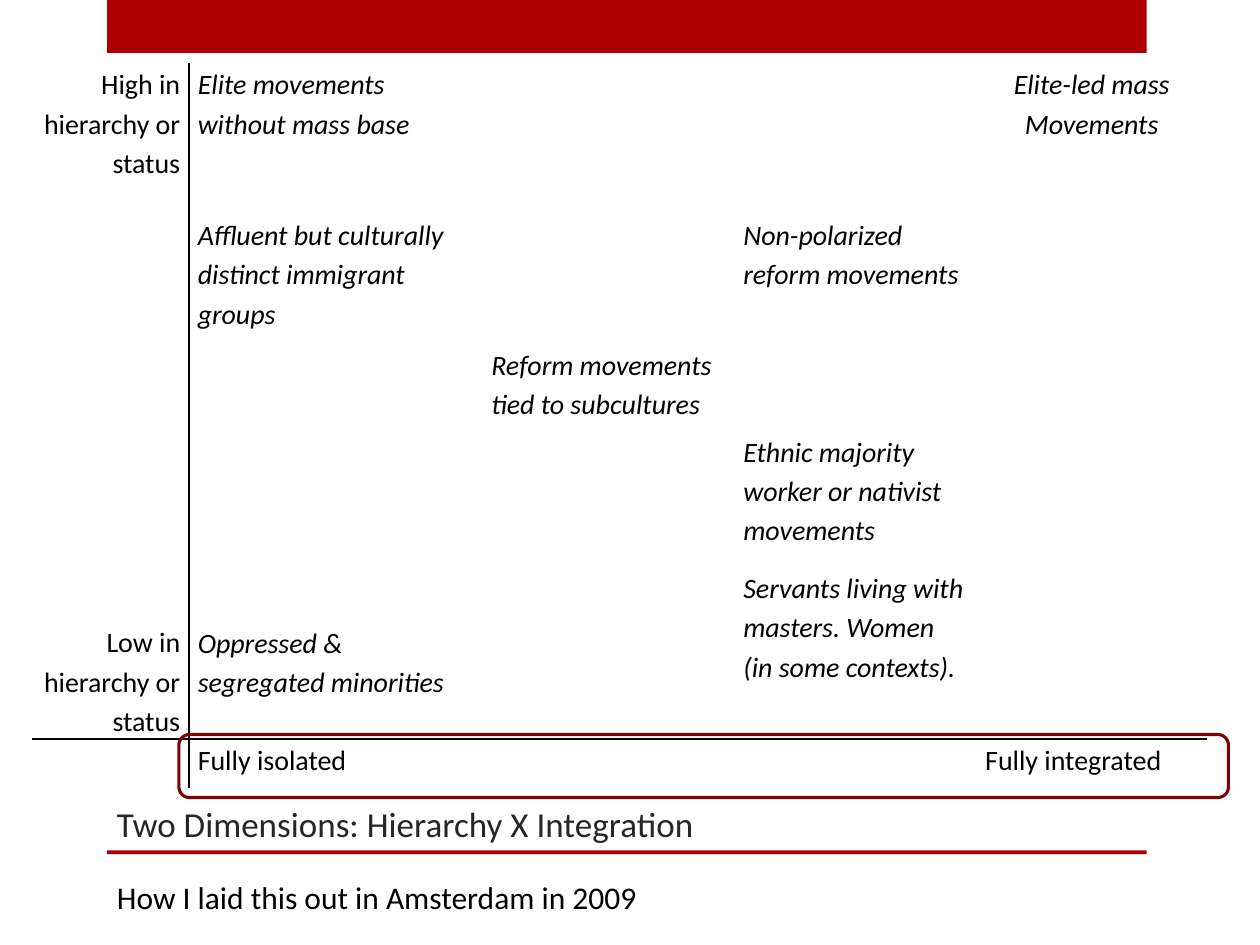
import dataclasses
import typing

import pptx
import pptx.dml.color
import pptx.enum.shapes
import pptx.enum.text
import pptx.oxml
import pptx.oxml.ns
import pptx.util

Inches = pptx.util.Inches
Pt = pptx.util.Pt
Align = pptx.enum.text.PP_ALIGN
Anchor = pptx.enum.text.MSO_ANCHOR
Kind = pptx.enum.shapes.MSO_SHAPE


@dataclasses.dataclass(frozen=True)
class Theme:
    font: str = "Calibri"
    red: str = "AD0101"
    frame: str = "800101"
    black: str = "000000"
    title: str = "262626"
    title_size: int = 20
    note_size: int = 18
    cell_size: int = 16
    empty_size: int = 12


class Box(typing.NamedTuple):
    left: float
    top: float
    width: float
    height: float

    def lengths(self) -> list:
        return [Inches(n) for n in self]


class Entry(typing.NamedTuple):
    row: int
    col: int
    text: str
    italic: bool = True
    align: Align = Align.LEFT
    anchor: Anchor = Anchor.TOP
    lift: float = 0


THEME = Theme()
COLS = [1.25, 2.33, 2, 1.92, 1.83]
ROWS = [0.69, 0.26, 1.03, 0.69, 1.08, 1.37, 0.39]
AXIS_ROW = len(ROWS) - 1
NO_STYLE = "{2D5ABB26-0587-4C30-8999-92F81FD0307C}"

ENTRIES = [
    Entry(0, 0, "High in hierarchy or status", False, Align.RIGHT),
    Entry(0, 1, "Elite movements without mass base"),
    Entry(0, 4, "Elite-led mass Movements", align=Align.CENTER),
    Entry(2, 1, "Affluent but culturally distinct immigrant groups"),
    Entry(2, 3, "Non-polarized reform movements"),
    Entry(3, 2, "Reform movements tied to subcultures"),
    Entry(4, 3, "Ethnic majority worker or nativist movements"),
    Entry(5, 0, "Low in hierarchy or status", False, Align.RIGHT, Anchor.BOTTOM),
    Entry(5, 1, "Oppressed & segregated minorities", anchor=Anchor.BOTTOM, lift=0.31),
    Entry(5, 3, "Servants living with masters. Women (in some contexts)."),
    Entry(6, 1, "Fully isolated", False),
    Entry(6, 4, "Fully integrated", False),
]


def color(code: str) -> pptx.dml.color.RGBColor:
    return pptx.dml.color.RGBColor.from_string(code)


def style(frame, size: int, code: str, italic: bool = False) -> None:
    for par in frame.paragraphs:
        for run in par.runs:
            run.font.name = THEME.font
            run.font.size = Pt(size)
            run.font.italic = italic
            run.font.color.rgb = color(code)


def add_bar(slide, box: Box) -> None:
    bar = slide.shapes.add_shape(Kind.RECTANGLE, *box.lengths())
    bar.shadow.inherit = False
    bar.fill.solid()
    bar.fill.fore_color.rgb = color(THEME.red)
    bar.line.fill.background()


def add_frame(slide, box: Box) -> None:
    frame = slide.shapes.add_shape(Kind.ROUNDED_RECTANGLE, *box.lengths())
    frame.shadow.inherit = False
    frame.fill.background()
    frame.line.color.rgb = color(THEME.frame)
    frame.line.width = Pt(1.75)


def add_text(slide, box: Box, text: str, size: int, code: str,
             wrap: bool, anchor: Anchor) -> None:
    frame = slide.shapes.add_textbox(*box.lengths()).text_frame
    frame.word_wrap = wrap
    frame.vertical_anchor = anchor
    frame.text = text
    style(frame, size, code)


def add_edge(cell, side: str, shown: bool) -> None:
    space = pptx.oxml.ns.nsdecls("a")
    paint = "<a:noFill/>"
    if shown:
        paint = f'<a:solidFill><a:srgbClr val="{THEME.black}"/></a:solidFill>'
    edge = pptx.oxml.parse_xml(
        f'<a:ln{side} {space} w="{Pt(1)}">{paint}</a:ln{side}>')
    cell._tc.get_or_add_tcPr().append(edge)


def clear_cell(cell, row: int, col: int) -> None:
    cell.margin_left = cell.margin_right = Inches(0.07)
    cell.margin_top = cell.margin_bottom = 0
    sides = {"L": col == 1, "R": col == 0,
             "T": row == AXIS_ROW, "B": row == AXIS_ROW - 1}
    for side, shown in sides.items():
        add_edge(cell, side, shown)
    cell.fill.background()
    end = pptx.oxml.parse_xml(
        f'<a:endParaRPr {pptx.oxml.ns.nsdecls("a")} sz="{THEME.empty_size * 100}"/>')
    cell.text_frame.paragraphs[0]._p.append(end)


def fill_cell(cell, entry: Entry) -> None:
    cell.text_frame.text = entry.text
    cell.vertical_anchor = entry.anchor
    cell.margin_bottom = Inches(entry.lift)
    par = cell.text_frame.paragraphs[0]
    par.alignment = entry.align
    par.line_spacing = 1.15
    style(cell.text_frame, THEME.cell_size, THEME.black, entry.italic)


def add_grid(slide) -> None:
    box = Box(0.25, 0.5, sum(COLS), sum(ROWS))
    shape = slide.shapes.add_table(len(ROWS), len(COLS), *box.lengths())
    table = shape.table
    table.first_row = table.horz_banding = False
    table._tbl.tblPr.find(pptx.oxml.ns.qn("a:tableStyleId")).text = NO_STYLE
    for col, width in zip(table.columns, COLS):
        col.width = Inches(width)
    for row, height in zip(table.rows, ROWS):
        row.height = Inches(height)
    for row in range(len(ROWS)):
        for col in range(len(COLS)):
            clear_cell(table.cell(row, col), row, col)
    for entry in ENTRIES:
        fill_cell(table.cell(entry.row, entry.col), entry)


def main() -> None:
    deck = pptx.Presentation()
    deck.slide_width, deck.slide_height = Inches(10), Inches(7.5)
    slide = deck.slides.add_slide(deck.slide_layouts[6])
    add_bar(slide, Box(0.85, 0, 8.25, 0.42))
    add_bar(slide, Box(0.85, 6.75, 8.25, 0.03))
    add_grid(slide)
    add_text(slide, Box(0.83, 6.17, 7.42, 0.58),
             "Two Dimensions: Hierarchy X Integration",
             THEME.title_size, THEME.title, True, Anchor.BOTTOM)
    add_text(slide, Box(0.83, 6.92, 4.45, 0.4),
             "How I laid this out in Amsterdam in 2009",
             THEME.note_size, THEME.black, False, Anchor.TOP)
    add_frame(slide, Box(1.42, 5.83, 8.33, 0.5))
    deck.save("out.pptx")


if __name__ == "__main__":
    main()
